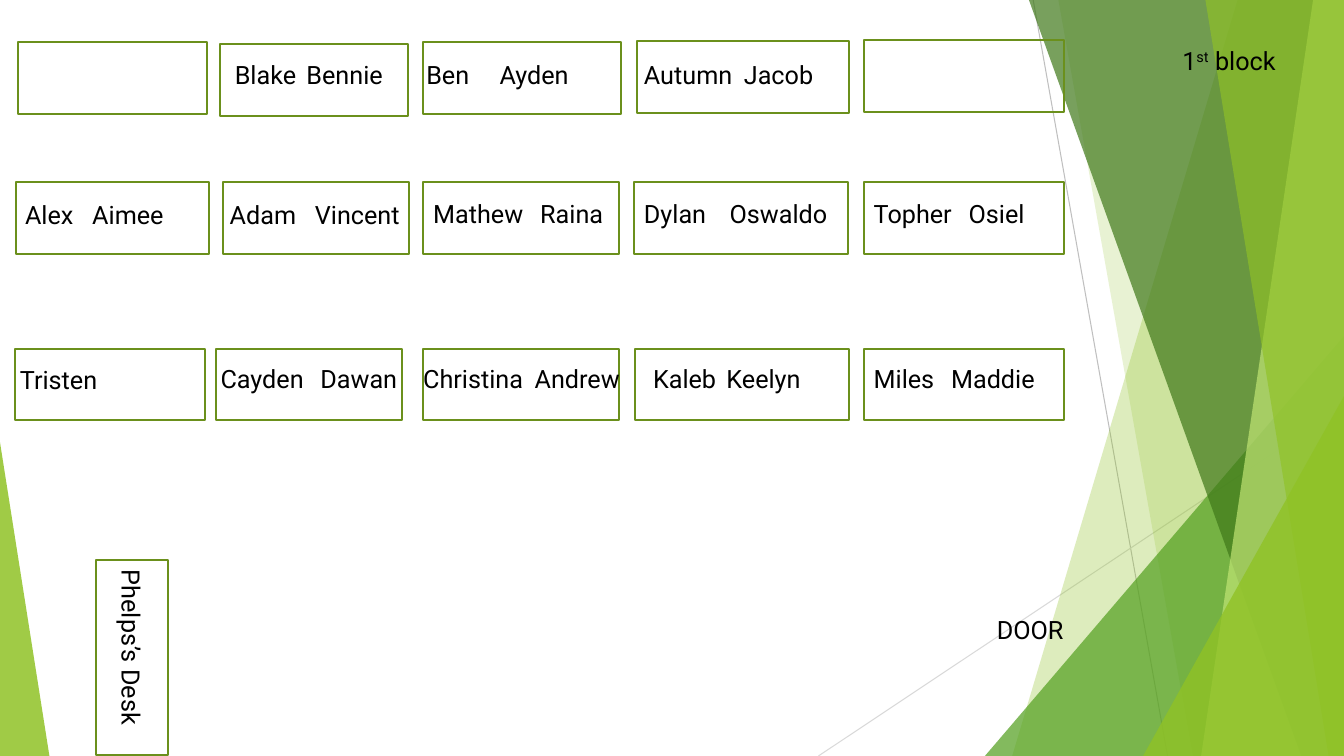
from lxml import etree
from pptx import Presentation
from pptx.dml.color import RGBColor
from pptx.enum.shapes import MSO_CONNECTOR as Connector, MSO_SHAPE as Shape
from pptx.enum.text import MSO_AUTO_SIZE as AutoSize
from pptx.oxml.ns import qn
from pptx.util import Pt

WIDTH, HEIGHT = 960, 540
BLACK = RGBColor(0x00, 0x00, 0x00)
DESK_GREEN = RGBColor(0x6B, 0x90, 0x1C)
LIME = RGBColor(0x90, 0xC2, 0x26)
LEAF = RGBColor(0x54, 0xA0, 0x21)
FOREST = RGBColor(0x3F, 0x78, 0x19)
PALE_LIME = RGBColor(0xC0, 0xE4, 0x74)
GREY = RGBColor(0xBF, 0xBF, 0xBF)
LIGHT_GREY = RGBColor(0xD9, 0xD9, 0xD9)

DESK_HEIGHT = 51.1
LABEL_HEIGHT = 28.8
INSET = 7.2


class SeatingPage:
    font_format = {"name": "Roboto", "size": Pt(18)}

    def __init__(self, page):
        self.page = page
        self.shapes = page.shapes

    def line(self, start, end, color):
        line = self.shapes.add_connector(
            Connector.STRAIGHT, *(Pt(value) for value in start + end))
        line.line.color.rgb = color
        line.line.width = Pt(0.75)
        etree.SubElement(line._element.spPr, qn("a:effectLst"))

    def glaze(self, shape, color, opacity):
        shape.shadow.inherit = False
        shape.line.fill.background()
        shape.fill.solid()
        shape.fill.fore_color.rgb = color
        tint = shape._element.spPr.find(qn("a:solidFill"))[0]
        etree.SubElement(tint, qn("a:alpha"), val=str(opacity * 1000))

    def band(self, top_x, bottom_x, color, opacity):
        """Fill from a slanted left edge to the right side of the page."""
        builder = self.shapes.build_freeform(Pt(top_x), 0)
        corners = [(WIDTH, 0), (WIDTH, HEIGHT), (bottom_x, HEIGHT)]
        builder.add_line_segments([(Pt(x), Pt(y)) for x, y in corners])
        self.glaze(builder.convert_to_shape(), color, opacity)

    def corner(self, left, top, width, apex, color, opacity):
        """Triangle standing on the bottom of the page."""
        shape = self.shapes.add_shape(
            Shape.ISOSCELES_TRIANGLE, Pt(left), Pt(top), Pt(width), Pt(HEIGHT - top))
        shape.adjustments[0] = apex
        self.glaze(shape, color, opacity)

    def desk(self, left, top, width, rotation=0):
        desk = self.shapes.add_shape(
            Shape.RECTANGLE, Pt(left), Pt(top), Pt(width), Pt(DESK_HEIGHT))
        desk.shadow.inherit = False
        desk.rotation = rotation
        desk.fill.background()
        desk.line.color.rgb = DESK_GREEN
        desk.line.width = Pt(1.5)

    def label(self, left, top, width, *spans, rotation=0, tab=None):
        """Write spans of (text, baseline shift in percent)."""
        box = self.shapes.add_textbox(Pt(left), Pt(top), Pt(width), Pt(LABEL_HEIGHT))
        box.rotation = rotation
        box.text_frame.word_wrap = True
        box.text_frame.auto_size = AutoSize.SHAPE_TO_FIT_TEXT
        para = box.text_frame.paragraphs[0]
        if tab:
            stops = etree.SubElement(para._p.get_or_add_pPr(), qn("a:tabLst"))
            position = Pt(tab - left - INSET)
            etree.SubElement(stops, qn("a:tab"), pos=str(position), algn="l")
        for text, shift in spans:
            span = para.add_run()
            span.text = text
            for name, value in self.font_format.items():
                setattr(span.font, name, value)
            span.font.color.rgb = BLACK
            if shift:
                span._r.get_or_add_rPr().set("baseline", str(shift * 1000))


# Each desk: left, top, width, then its label: left, top, width, names,
# and where the second name starts
ROWS = [
    [
        (13, 30.2, 134.6, None),
        (157, 31.7, 134.6, (160.6, 38.9, 131, ("Blake", "Bennie"), 219)),
        (302.4, 30.2, 141.1, (297.4, 38.9, 146.9, ("Ben", "Ayden"), 357)),
        (455, 29.5, 151.2, (452.9, 38.9, 152.6, ("Autumn", "Jacob"), 531.5)),
        (617, 28.8, 143.3, None),
    ],
    [
        (11.5, 130.3, 137.5, (10.8, 139, 138.2, ("Alex", "Aimee"), 66)),
        (159.1, 130.3, 133.2, (157, 139, 140.4, ("Adam", "Vincent"), 225)),
        (302.4, 130.3, 139.7, (302.4, 138.2, 139.7, ("Mathew", "Raina"), 386)),
        (452.9, 130.3, 152.6, (452.9, 138.2, 152.6, ("Dylan", "Oswaldo"), 521.3)),
        (617, 130.3, 143.3, (617, 138.2, 143.3, ("Topher", "Osiel"), 692)),
    ],
    [
        (10.8, 249.1, 135.4, (7.2, 257, 139.7, ("Tristen",), None)),
        (154.1, 249.1, 133.2, (150.5, 256.3, 148.3, ("Cayden", "Dawan"), 229)),
        (302.4, 249.1, 139.7, (295.2, 256.3, 158.4, ("Christina", "Andrew"), 382)),
        (453.6, 249.1, 152.6, (459.4, 256.3, 141.8, ("Kaleb", "Keelyn"), 519)),
        (617, 249.1, 143.3, (617, 256.3, 143.3, ("Miles", "Maddie"), 679.5)),
    ],
]


def main():
    deck = Presentation()
    deck.slide_width, deck.slide_height = Pt(WIDTH), Pt(HEIGHT)
    plan = SeatingPage(deck.slides.add_slide(deck.slide_layouts[6]))

    # Green facets behind the plan
    plan.line((738, 0), (834, HEIGHT), GREY)
    plan.line((WIDTH, 290), (584.6, HEIGHT), LIGHT_GREY)
    plan.band(884, 723, LIME, 30)
    plan.band(756, 852, LIME, 20)
    plan.corner(703.5, 240, 256.5, 1, LEAF, 72)
    plan.band(735, 929.5, FOREST, 70)
    plan.band(938, 858, PALE_LIME, 70)
    plan.band(861, 949, LIME, 65)
    plan.corner(816.5, 283, 143.5, 1, LIME, 80)
    plan.corner(0, 316, 35.3, 0, LIME, 85)

    # Student desks
    for row in ROWS:
        for left, top, width, seats in row:
            plan.desk(left, top, width)
            if seats:
                *place, names, tab = seats
                plan.label(*place, ("\t".join(names), 0), tab=tab)

    # Teacher's desk, door and class
    plan.desk(24.5, 444.2, 139.7, rotation=90)
    plan.label(21.6, 457.9, 144.7, ("Phelps’s Desk", 0), rotation=90)
    plan.label(704.9, 435.6, 144.7, ("DOOR", 0))
    plan.label(837.4, 28.8, 101.5, ("1", 0), ("st", 30), (" block", 0))

    deck.save("out.pptx")


if __name__ == "__main__":
    main()
